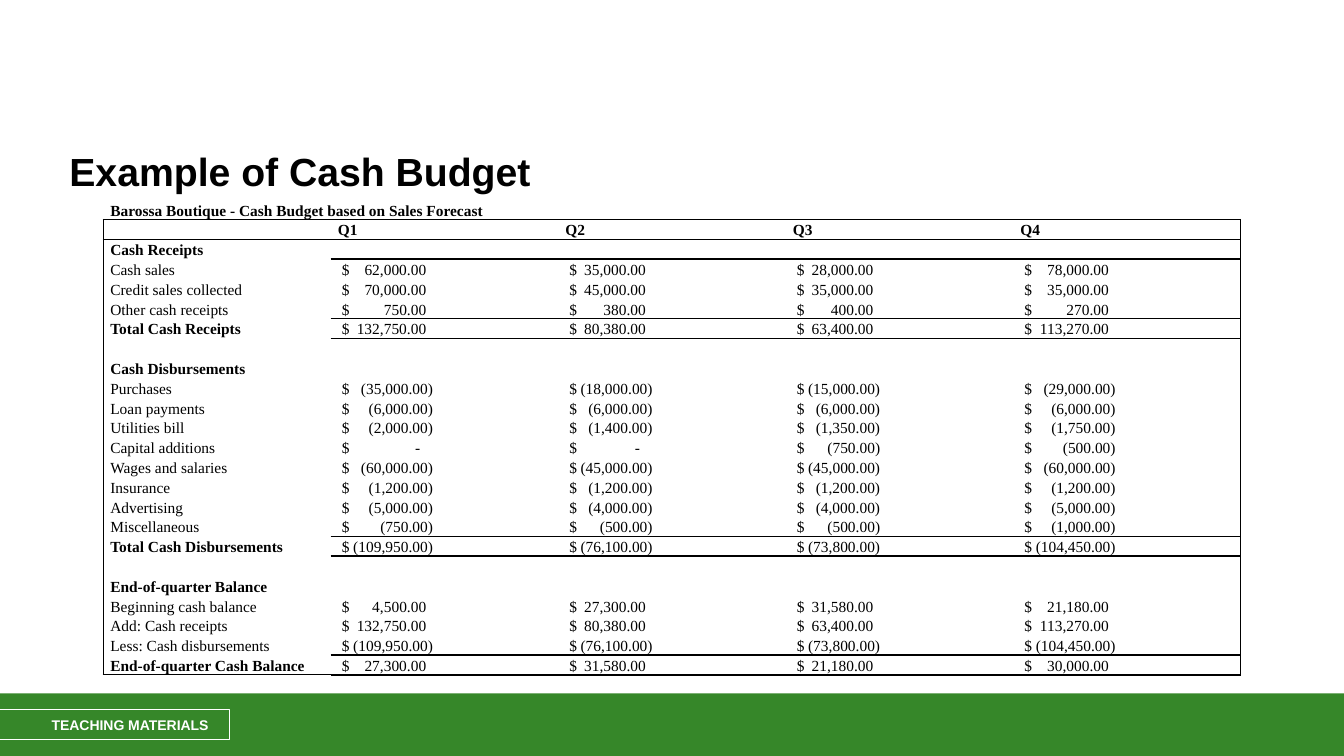
"""Build the cash budget slide."""
from dataclasses import dataclass

from lxml import etree
from pptx import Presentation
from pptx.dml.color import RGBColor
from pptx.enum.shapes import MSO_SHAPE
from pptx.enum.text import MSO_ANCHOR, PP_ALIGN
from pptx.oxml.ns import qn
from pptx.util import Cm, Pt

RECTANGLE = MSO_SHAPE.RECTANGLE
TOP, MIDDLE, BOTTOM = MSO_ANCHOR.TOP, MSO_ANCHOR.MIDDLE, MSO_ANCHOR.BOTTOM
LEFT = PP_ALIGN.LEFT
PLAIN_TABLE = "{2D5ABB26-0587-4C30-8999-92F81FD0307C}"

CAPTION = "Barossa Boutique - Cash Budget based on Sales Forecast"
QUARTERS = ("Q1", "Q2", "Q3", "Q4")
LEDGER = (
    ("Cash Receipts",),
    ("Cash sales", 62000, 35000, 28000, 78000),
    ("Credit sales collected", 70000, 45000, 35000, 35000),
    ("Other cash receipts", 750, 380, 400, 270),
    ("Total Cash Receipts", 132750, 80380, 63400, 113270),
    ("",),
    ("Cash Disbursements",),
    ("Purchases", -35000, -18000, -15000, -29000),
    ("Loan payments", -6000, -6000, -6000, -6000),
    ("Utilities bill", -2000, -1400, -1350, -1750),
    ("Capital additions", 0, 0, -750, -500),
    ("Wages and salaries", -60000, -45000, -45000, -60000),
    ("Insurance", -1200, -1200, -1200, -1200),
    ("Advertising", -5000, -4000, -4000, -5000),
    ("Miscellaneous", -750, -500, -500, -1000),
    ("Total Cash Disbursements", -109950, -76100, -73800, -104450),
    ("",),
    ("End-of-quarter Balance",),
    ("Beginning cash balance", 4500, 27300, 31580, 21180),
    ("Add: Cash receipts", 132750, 80380, 63400, 113270),
    ("Less: Cash disbursements", -109950, -76100, -73800, -104450),
    ("End-of-quarter Cash Balance", 27300, 31580, 21180, 30000),
)
TOTALS = ("Total Cash Receipts", "Total Cash Disbursements",
          "End-of-quarter Cash Balance")
AMOUNT_EDGES = (2.13, 1.93, 1.93, 2.13)


@dataclass(frozen=True)
class Theme:
    """Colours, fonts and type sizes of the slide."""

    green: RGBColor = RGBColor(0x36, 0x87, 0x29)
    white: RGBColor = RGBColor(0xFF, 0xFF, 0xFF)
    black: RGBColor = RGBColor(0, 0, 0)
    sans: str = "Arial"
    serif: str = "Times New Roman"
    title_size: float = 28
    tag_size: float = 10
    table_size: float = 11
    thin: float = 1
    thick: float = 2.25


def write(frame, text, *, font, size, color, bold=False, spacing=None,
          after=None, tab=None):
    """Put one formatted paragraph into a text frame."""
    paragraph = frame.paragraphs[0]
    paragraph.alignment = LEFT
    if tab is not None:
        stops = etree.SubElement(paragraph._p.get_or_add_pPr(), qn("a:tabLst"))
        etree.SubElement(stops, qn("a:tab"), pos=str(Cm(tab)), algn="r")
    if spacing:
        paragraph.line_spacing = spacing
    if after:
        paragraph.space_after = Pt(after)
    if text:
        run = paragraph.add_run()
        run.text = text
        run.font.name, run.font.size, run.font.bold = font, Pt(size), bold
        run.font.color.rgb = color
    else:
        etree.SubElement(paragraph._p, qn("a:endParaRPr"), sz=str(size * 100))


def accounting(value, edge):
    """Return the text of an amount and its right tab position."""
    if value == 0:
        return "$\t-", edge - 0.15
    if value < 0:
        return f"$\t({-value:,.2f})", edge + 0.17
    return f"$\t{value:,.2f}", edge


class Slide:
    """Draw styled elements on one slide."""

    def __init__(self, slide, theme):
        """Keep the slide and its theme."""
        self.shapes = slide.shapes
        self.theme = theme

    def box(self, left, top, width, height, fill=None, line=None):
        """Add a rectangle."""
        shape = self.shapes.add_shape(
            RECTANGLE, Cm(left), Cm(top), Cm(width), Cm(height))
        shape.shadow.inherit = False
        if fill is None:
            shape.fill.background()
        else:
            shape.fill.solid()
            shape.fill.fore_color.rgb = fill
        if line is None:
            shape.line.fill.background()
        else:
            shape.line.color.rgb = line
            shape.line.width = Pt(0.75)
        return shape

    def tag(self, text, left, top, width, height):
        """Add the outlined footer label."""
        theme = self.theme
        frame = self.box(left, top, width, height, line=theme.white).text_frame
        frame.margin_left = Cm(2)
        frame.vertical_anchor = MIDDLE
        frame.word_wrap = True
        write(frame, text, font=theme.sans, size=theme.tag_size,
              color=theme.white, bold=True)

    def title(self, text, left, top, width, height):
        """Add the slide title."""
        theme = self.theme
        frame = self.shapes.add_textbox(
            Cm(left), Cm(top), Cm(width), Cm(height)).text_frame
        frame.word_wrap = True
        frame.vertical_anchor = TOP
        write(frame, text, font=theme.sans, size=theme.title_size,
              color=theme.black, bold=True)

    def table(self, rows, columns, left, top, width, height):
        """Add a plain table with equal rows and columns."""
        frame = self.shapes.add_table(
            rows, columns, Cm(left), Cm(top), Cm(width), Cm(height))
        table = frame.table
        table.first_row = table.horz_banding = False
        table._tbl.tblPr.find(qn("a:tableStyleId")).text = PLAIN_TABLE
        for row in table.rows:
            row.height = Cm(height / rows)
        for column in table.columns:
            column.width = Cm(width / columns)
        return table

    def cell(self, cell, text, borders, bold=False, tab=None):
        """Fill a table cell and rule its sides."""
        theme = self.theme
        cell.margin_left = Cm(0.18 if tab is None else 0.28)
        cell.margin_right = Cm(0.18)
        cell.margin_top = cell.margin_bottom = 0
        cell.vertical_anchor = BOTTOM
        properties = cell._tc.get_or_add_tcPr()
        for side in "LRTB":
            if borders.get(side):
                line = etree.SubElement(properties, qn(f"a:ln{side}"),
                                        w=str(Pt(borders[side])))
                fill = etree.SubElement(line, qn("a:solidFill"))
                etree.SubElement(fill, qn("a:srgbClr"), val=str(theme.black))
        cell.fill.background()
        write(cell.text_frame, text, font=theme.serif, size=theme.table_size,
              color=theme.black, bold=bold, spacing=1.07, after=8, tab=tab)

    def budget(self, left, top, width, height):
        """Add the cash budget table."""
        thin, thick = self.theme.thin, self.theme.thick
        entries = ((CAPTION,), ("", *QUARTERS), *LEDGER)
        last_row, last_column = len(entries) - 1, len(QUARTERS)
        table = self.table(last_row + 1, last_column + 1,
                           left, top, width, height)
        table.cell(0, 0).merge(table.cell(0, last_column - 1))
        ruled = {0, 1, *(i - 1 for i, entry in enumerate(entries)
                         if entry[0] in TOTALS)}
        for r, entry in enumerate(entries):
            for c in range(last_column + 1):
                value = entry[c] if c < len(entry) else ""
                borders = {
                    "L": thin if r and c == 0 else 0,
                    "R": thin if r and c == last_column else 0,
                    "T": thin if r - 1 in ruled and (c or r == 1) else 0,
                    "B": thin if r in ruled and (c or r == 0) else 0,
                }
                if r == last_row:
                    borders["B"] = thick if c else thin
                tab = None
                bold = r == 1 or len(entry) == 1 or (
                    c == 0 and entry[0] in TOTALS)
                if not isinstance(value, str):
                    value, tab = accounting(value, AMOUNT_EDGES[c - 1])
                self.cell(table.cell(r, c), value, borders, bold, tab)


def main():
    """Compose and save the slide."""
    deck = Presentation()
    deck.slide_width, deck.slide_height = Cm(33.87), Cm(19.05)
    theme = Theme()
    slide = Slide(deck.slides.add_slide(deck.slide_layouts[6]), theme)
    slide.box(0, 17.47, 33.87, 1.58, fill=theme.green)
    slide.tag("TEACHING MATERIALS", -0.7, 17.88, 6.48, 0.76)
    slide.title("Example of Cash Budget", 1.5, 3.6, 30, 12)
    slide.budget(2.6, 5.03, 28.67, 11.98)
    deck.save("out.pptx")


if __name__ == "__main__":
    main()
